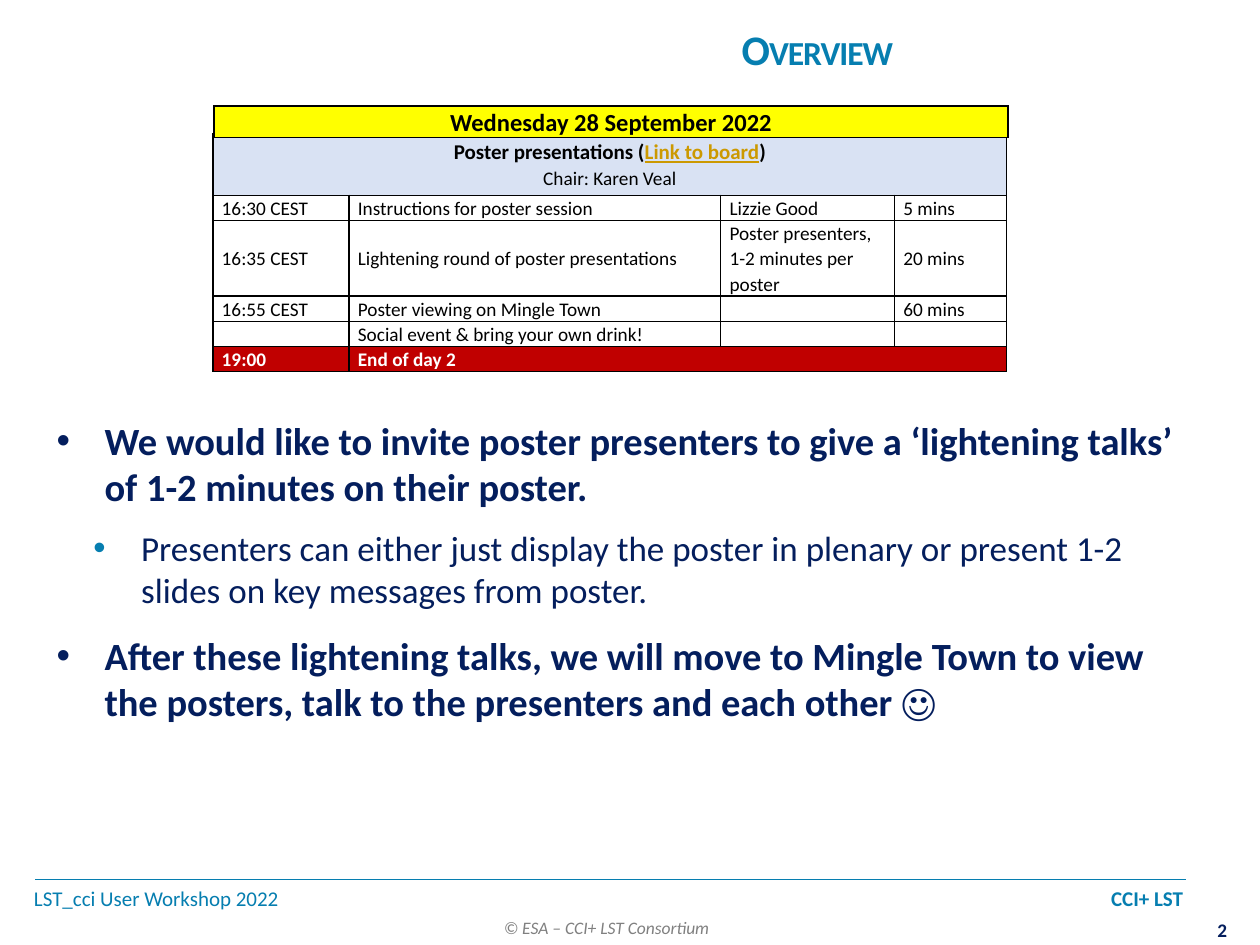
from dataclasses import dataclass

from lxml import etree
from pptx import Presentation
from pptx.dml.color import RGBColor
from pptx.enum.shapes import MSO_CONNECTOR
from pptx.enum.text import MSO_ANCHOR, MSO_AUTO_SIZE, PP_ALIGN
from pptx.oxml.ns import qn
from pptx.util import Inches, Pt

MIDDLE, TOP = MSO_ANCHOR.MIDDLE, MSO_ANCHOR.TOP
LEFT, CENTER = PP_ALIGN.LEFT, PP_ALIGN.CENTER
FIXED = MSO_AUTO_SIZE.NONE
LINE = MSO_CONNECTOR.STRAIGHT


@dataclass(frozen=True)
class Theme:
    face: str = "Calibri"
    blue: str = "067EB0"
    navy: str = "041E5D"
    grey: str = "808080"
    black: str = "000000"
    white: str = "FFFFFF"
    yellow: str = "FFFF00"
    pale: str = "D9E2F3"
    red: str = "C00000"
    gold: str = "CC9900"
    title: int = 24
    lead: int = 22
    sub: int = 20
    day: int = 14
    head: int = 12
    cell: int = 11
    foot: int = 12
    note: int = 10


T = Theme()


def style(font, size, color, bold=False, italic=False):
    font.name, font.size = T.face, Pt(size)
    font.bold, font.italic = bold, italic
    font.color.rgb = RGBColor.from_string(color)


def add(node, tag, **attrs):
    return etree.SubElement(node, qn(tag), attrs)


# Text regions

def title(shape, box, text):
    shape.left, shape.top, shape.width, shape.height = map(Inches, box)
    frame = shape.text_frame
    frame.auto_size, frame.vertical_anchor = FIXED, MIDDLE
    para = frame.paragraphs[0]
    para.alignment = CENTER
    run = para.add_run()
    run.text = text
    props = run._r.get_or_add_rPr()
    props.set("cap", "small")
    props.set("spc", "-60")
    style(para.font, T.title, T.blue, bold=True)


def body(shape, box, items):
    shape.left, shape.top, shape.width, shape.height = map(Inches, box)
    frame = shape.text_frame
    frame.auto_size, frame.vertical_anchor = FIXED, TOP
    for i, (level, text) in enumerate(items):
        para = frame.add_paragraph() if i else frame.paragraphs[0]
        para.text, para.level = text, level
        para.space_before = Pt((4 if level else 12) if i else 0)
        para.space_after = Pt(0 if level else 6)
        props = para._p.get_or_add_pPr()
        props.set("marL", str(Inches(0.67 if level else 0.38)))
        props.set("indent", str(Inches(-0.38)))
        tint = add(props, "a:buClr")
        add(tint, "a:srgbClr", val=T.blue if level else T.navy)
        add(props, "a:buFont", typeface="Arial")
        add(props, "a:buChar", char="•")
        style(para.font, T.sub if level else T.lead, T.navy, bold=not level)


def label(slide, box, text, size, color, pad=(0, 0), align=LEFT,
          wrap=False, tab=None, **kind):
    frame = slide.shapes.add_textbox(*map(Inches, box)).text_frame
    frame.word_wrap = wrap
    frame.margin_left = frame.margin_right = Inches(pad[0])
    frame.margin_top = frame.margin_bottom = Inches(pad[1])
    para = frame.paragraphs[0]
    para.text, para.alignment = text, align
    if tab:
        tabs = add(para._p.get_or_add_pPr(), "a:tabLst")
        add(tabs, "a:tab", pos=str(Inches(tab)), algn="r")
    style(para.font, size, color, **kind)
    return para


def footer(slide, box):
    x, y, w, h = box
    para = label(slide, box, "LST_cci User Workshop 2022\t", T.foot, T.blue,
                 pad=(0, 0.05), wrap=True, tab=w - 0.02)
    run = para.add_run()
    run.text, run.font.bold = "CCI+ LST", True

    rule = slide.shapes.add_connector(
        LINE, Inches(x + 0.01), Inches(y), Inches(x + w), Inches(y))
    rule.line.color.rgb = RGBColor.from_string(T.blue)
    rule.line.width = Pt(1)
    add(rule._element.spPr, "a:effectLst")

    label(slide, (x + 3.63, y + 0.25, 1.86, 0.27),
          "© ESA – CCI+ LST Consortium", T.note, T.grey,
          pad=(0.1, 0.05), italic=True)
    label(slide, (x + 9.3, y + 0.31, 0.26, 0.19), "2", T.cell, T.navy,
          align=CENTER, bold=True)


# Tables

def grid(slide, box, cols, rows):
    shape = slide.shapes.add_table(len(rows), len(cols), *map(Inches, box))
    table = shape.table
    table.first_row = table.horz_banding = False
    for col, width in zip(table.columns, cols):
        col.width = Inches(width)
    for row, height in zip(table.rows, rows):
        row.height = Inches(height)
    for cell in table.iter_cells():
        cell.margin_left = cell.margin_right = Inches(0.07)
        cell.margin_top = cell.margin_bottom = 0
        cell.vertical_anchor = MIDDLE
        props = cell._tc.get_or_add_tcPr()
        for side in "LRTB":
            edge = add(props, f"a:ln{side}", w=str(Pt(1)))
            add(add(edge, "a:solidFill"), "a:srgbClr", val=T.black)
        cell.fill.background()
    return table


def write(para, text, size=T.cell, color=T.black, bold=False, align=LEFT):
    para.alignment, para.line_spacing = align, 1.07
    if not text:
        para._p.get_or_add_endParaRPr().set("sz", str(size * 100))
        return None
    run = para.add_run()
    run.text = text
    style(run.font, size, color, bold)
    return run


def paint(cell, color):
    cell.fill.solid()
    cell.fill.fore_color.rgb = RGBColor.from_string(color)


def agenda(slide, box, items):
    cols = (1.08, 2.95, 1.38, 0.89)
    rows = (0.49, 0.2, 0.6, 0.2, 0.2, 0.2)
    table = grid(slide, box, cols, rows)

    # Session heading across all columns
    head = table.cell(0, 0)
    head.merge(table.cell(0, 3))
    paint(head, T.pale)
    frame = head.text_frame
    for text, color in (("Poster presentations (", T.black),
                        ("Link to board", T.gold), (")", T.black)):
        run = write(frame.paragraphs[0], text, T.head, color, True, CENTER)
        run.font.underline = color == T.gold
    write(frame.add_paragraph(), "Chair: Karen Veal", align=CENTER)

    # Timed entries, closing with the red row
    last = len(rows) - 1
    table.cell(last, 1).merge(table.cell(last, 3))
    for r, item in enumerate(items, 1):
        end = r == last
        for c, text in enumerate(item):
            cell = table.cell(r, c)
            write(cell.text_frame.paragraphs[0], text,
                  color=T.white if end else T.black, bold=end)
            if end:
                paint(cell, T.red)


def banner(slide, box, text):
    cell = grid(slide, box, box[2:3], box[3:]).cell(0, 0)
    paint(cell, T.yellow)
    write(cell.text_frame.paragraphs[0], text, T.day, bold=True, align=CENTER)


def main():
    deck = Presentation()
    deck.slide_width, deck.slide_height = Inches(10), Inches(7.5)
    slide = deck.slides.add_slide(deck.slide_layouts[1])
    footer(slide, (0.27, 6.98, 9.14, 0.3))
    title(slide.shapes.title, (3.5, 0.05, 5.91, 0.67), "Overview")
    body(slide.placeholders[1], (0.35, 3.26, 9.13, 2.71), (
        (0, "We would like to invite poster presenters to give a "
            "‘lightening talks’ of 1-2 minutes on their poster."),
        (1, "Presenters can either just display the poster in plenary or "
            "present 1-2 slides on key messages from poster."),
        (0, "After these lightening talks, we will move to Mingle Town to "
            "view the posters, talk to the presenters and each other ☺"),
    ))
    agenda(slide, (1.69, 1.06, 6.3, 1.89), (
        ("16:30 CEST", "Instructions for poster session",
         "Lizzie Good", "5 mins"),
        ("16:35 CEST", "Lightening round of poster presentations",
         "Poster presenters, 1-2 minutes per poster", "20 mins"),
        ("16:55 CEST", "Poster viewing on Mingle Town", "", "60 mins"),
        ("", "Social event & bring your own drink!", "", ""),
        ("19:00", "End of day 2"),
    ))
    banner(slide, (1.7, 0.84, 6.3, 0.24), "Wednesday 28 September 2022")
    deck.save("out.pptx")


if __name__ == "__main__":
    main()
